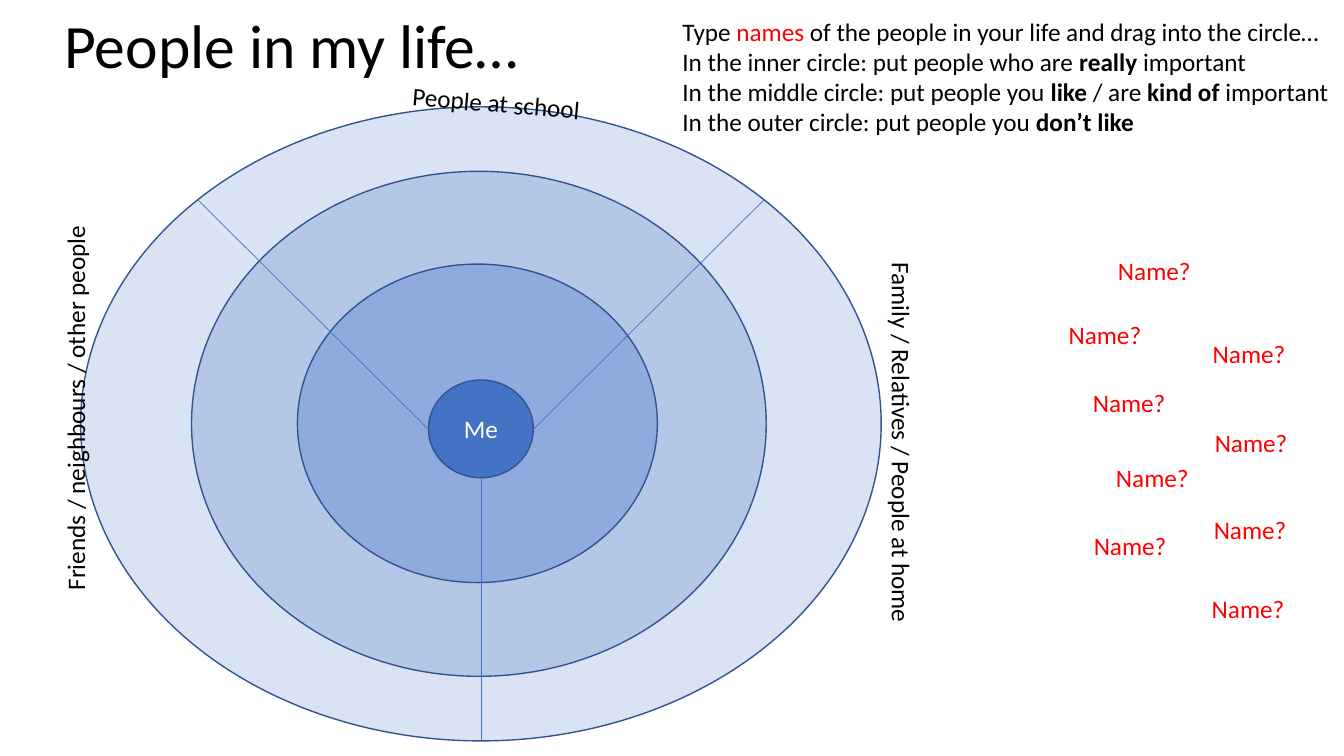
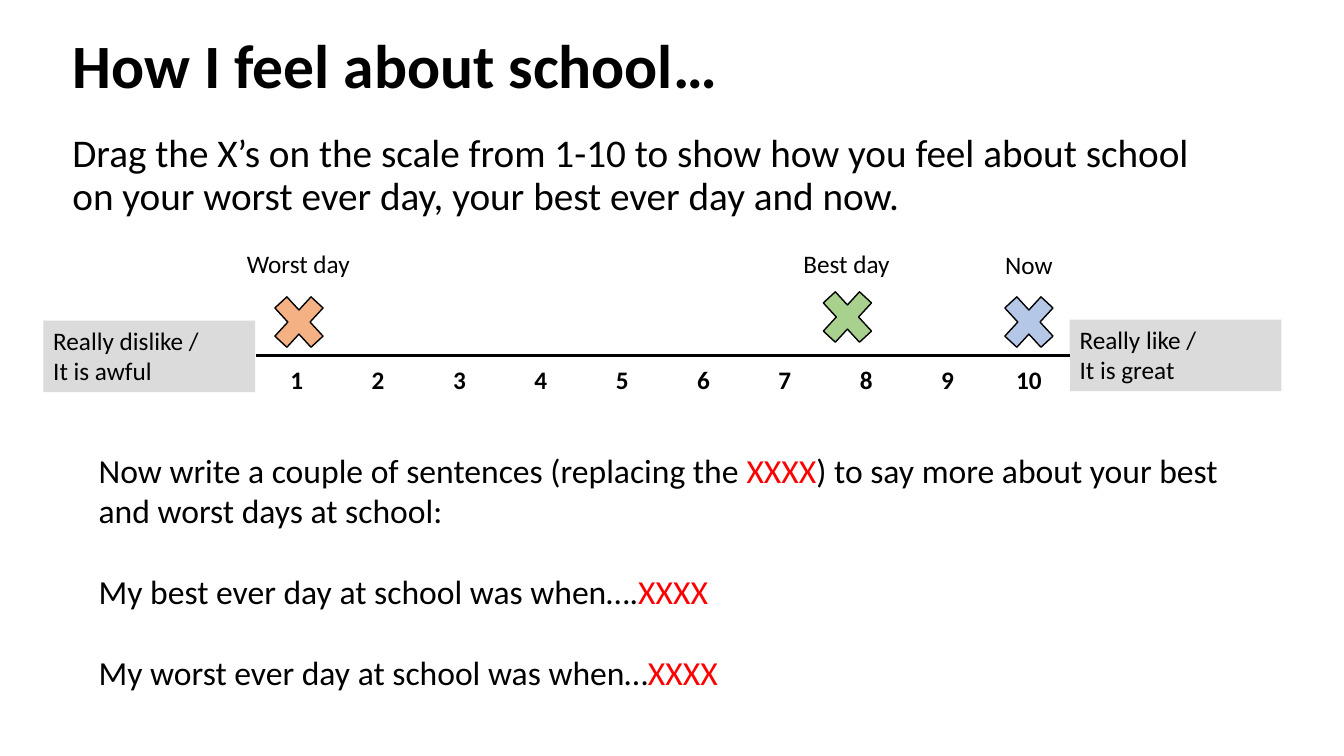
"""Builds two worksheet slides: people in my life, and feelings about school."""
from dataclasses import dataclass

from lxml.etree import SubElement
from pptx import Presentation
from pptx.dml.color import RGBColor
from pptx.enum.shapes import MSO_CONNECTOR as Link, MSO_SHAPE as Form
from pptx.enum.text import MSO_ANCHOR as Anchor, PP_ALIGN as Align
from pptx.oxml.ns import qn
from pptx.util import Pt


@dataclass(frozen=True)
class Theme:
    font: str = "Calibri"
    ink: str = "000000"
    red: str = "FF0000"
    white: str = "FFFFFF"
    grey: str = "DBDBDB"
    edge: str = "325491"
    blue: str = "4472C4"
    pale: str = "DAE3F3"
    light: str = "B4C7E7"
    mid: str = "8FAADC"
    green: str = "A9D18E"
    peach: str = "F4B183"
    head: int = 44
    lead: int = 28
    body: int = 24
    note: int = 18


T = Theme()
UNIT = 9144


def px(*nums):
    return [n * UNIT for n in nums]


def rgb(code):
    return RGBColor.from_string(code)


def write(frame, paras, size=T.note, color=T.ink, bold=False,
          align=Align.LEFT, space=None, gap=0):
    """Fill a frame; a run is plain text or a (text, style) pair."""
    for i, runs in enumerate(paras):
        para = frame.add_paragraph() if i else frame.paragraphs[0]
        para.alignment = align
        if space:
            para.line_spacing = space
        if i and gap:
            para.space_before = Pt(gap)
        for part in runs:
            text, style = (part, "") if isinstance(part, str) else part
            run = para.add_run()
            run.text = text
            font = run.font
            font.name, font.size = T.font, Pt(size)
            font.bold = bold or style == "bold"
            font.color.rgb = rgb(T.red if style == "red" else color)


def label(shapes, spot, paras, wrap=True, turn=0, anchor=Anchor.TOP, **look):
    box = shapes.add_textbox(*px(*spot))
    box.rotation = turn
    frame = box.text_frame
    frame.word_wrap = wrap
    frame.vertical_anchor = anchor
    write(frame, paras, **look)


def title(slide, left, height, text, bold=False):
    label(slide.shapes, (left, 0, 1150, height), [[text]], anchor=Anchor.MIDDLE,
          size=T.head, bold=bold, space=0.9)


def shape(shapes, form, spot, fill, edge=None):
    item = shapes.add_shape(form, *px(*spot))
    item.shadow.inherit = False
    item.fill.solid()
    item.fill.fore_color.rgb = rgb(fill)
    if edge:
        item.line.color.rgb = rgb(edge)
        item.line.width = Pt(1)
    else:
        item.line.fill.background()
    return item


def rule(shapes, ends, color, width):
    line = shapes.add_connector(Link.STRAIGHT, *px(*ends))
    line.line.color.rgb = rgb(color)
    line.line.width = Pt(width)
    SubElement(line._element.spPr, qn("a:effectLst"))


def scale(shapes, spot, count):
    """Add a one-row table of numbers without fill."""
    grid = shapes.add_table(1, count, *px(*spot)).table
    grid.first_row = grid.horz_banding = False
    for i, cell in enumerate(grid.iter_cells(), 1):
        cell.fill.background()
        write(cell.text_frame, [[str(i)]], bold=True, align=Align.CENTER)


def panel(shapes, spot, lines):
    box = shape(shapes, Form.RECTANGLE, spot, T.grey)
    box.text_frame.word_wrap = True
    box.text_frame.vertical_anchor = Anchor.TOP
    write(box.text_frame, [[line] for line in lines])


def marker(slide, left, top, fill, text, tag):
    """Group a cross with its label so both move together."""
    shapes = slide.shapes.add_group_shape().shapes
    shape(shapes, Form.MATH_MULTIPLY, (left, top, 69, 75), fill, T.ink)
    label(shapes, tag, [[text]], wrap=False)


def target(slide):
    """Draw the rings, their dividing lines and their labels."""
    shapes = slide.shapes.add_group_shape().shapes
    rings = [((80, 106, 794, 629), T.pale), ((190, 170, 570, 501), T.light),
             ((295, 262, 357, 316), T.mid), ((425, 377, 104, 97), T.blue)]
    for spot, fill in rings:
        core = shape(shapes, Form.OVAL, spot, fill, T.edge)
    core.text_frame.vertical_anchor = Anchor.MIDDLE
    write(core.text_frame, [["Me"]], color=T.white, align=Align.CENTER)
    for ends in [(196, 198, 425, 426), (758, 198, 529, 426), (477, 735, 477, 474)]:
        rule(shapes, ends, T.blue, 0.5)
    for spot, turn, text in [
            ((398, 83, 213, 66), 4.7, "People at school"),
            ((660, 378, 382, 127), 90, "Family / Relatives / People at home"),
            ((-94, 357, 387, 90), 270, "Friends / neighbours / other people")]:
        label(shapes, spot, [[text]], turn=turn)


def people(slide):
    title(slide, 54, 97, "People in my life…")
    target(slide)
    label(slide.shapes, (667, 11, 666, 131), [
        ["Type ", ("names", "red"),
         " of the people in your life and drag into the circle…"],
        ["In the inner circle: put people who are ", ("really ", "bold"), "important"],
        ["In the middle circle: put people you ", ("like ", "bold"), "/ are ",
         ("kind of ", "bold"), "important"],
        ["In the outer circle: put people you ", ("don’t like", "bold")]])
    for left, top in [(1050, 312), (1074, 379), (1097, 454), (1075, 521), (1099, 248),
                      (1193, 331), (1195, 419), (1194, 505), (1192, 584)]:
        label(slide.shapes, (left, top, 93, 40), [["Name?"]], wrap=False, color=T.red)


def school(slide):
    shapes = slide.shapes
    title(slide, 62, 135, "How I feel about school…", bold=True)
    label(shapes, (62, 128, 1150, 100), [[
        "Drag the X’s on the scale from 1-10 to show how you feel about school "
        "on your worst ever day, your best ever day and now."]],
        size=T.lead, space=0.9)
    panel(shapes, (43, 318, 210, 71), ["Really dislike /", "It is awful"])
    panel(shapes, (1061, 317, 210, 71), ["Really like /", "It is great"])
    rule(shapes, (254, 353, 1061, 353), T.ink, 2.25)
    scale(shapes, (254, 358, 807, 41), 10)
    marker(slide, 986, 282, T.light, "Now", (987, 242, 68, 40))
    marker(slide, 806, 277, T.green, "Best day", (787, 241, 107, 40))
    marker(slide, 262, 282, T.peach, "Worst day", (235, 241, 123, 40))
    blank = ("XXXX", "red")
    label(shapes, (88, 441, 1138, 252), [
        ["Now write a couple of sentences (replacing the ", blank,
         ") to say more about your best and worst days at school:"],
        ["My best ever day at school was when….", blank],
        ["My worst ever day at school was when…", blank]], size=T.body, gap=29)


def main():
    deck = Presentation()
    deck.slide_width, deck.slide_height = px(1333, 750)
    for build in (people, school):
        build(deck.slides.add_slide(deck.slide_layouts[6]))
    deck.save("out.pptx")


if __name__ == "__main__":
    main()
